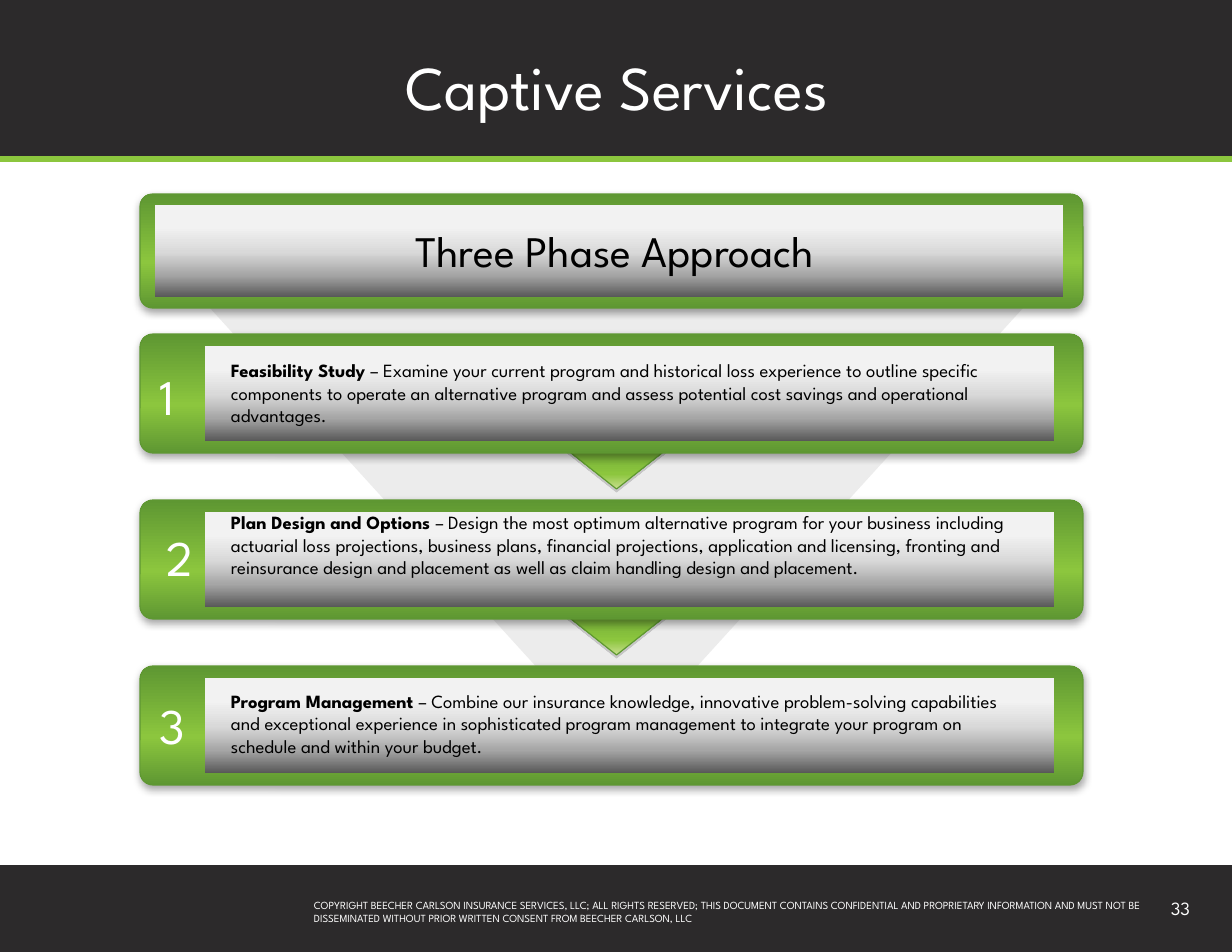
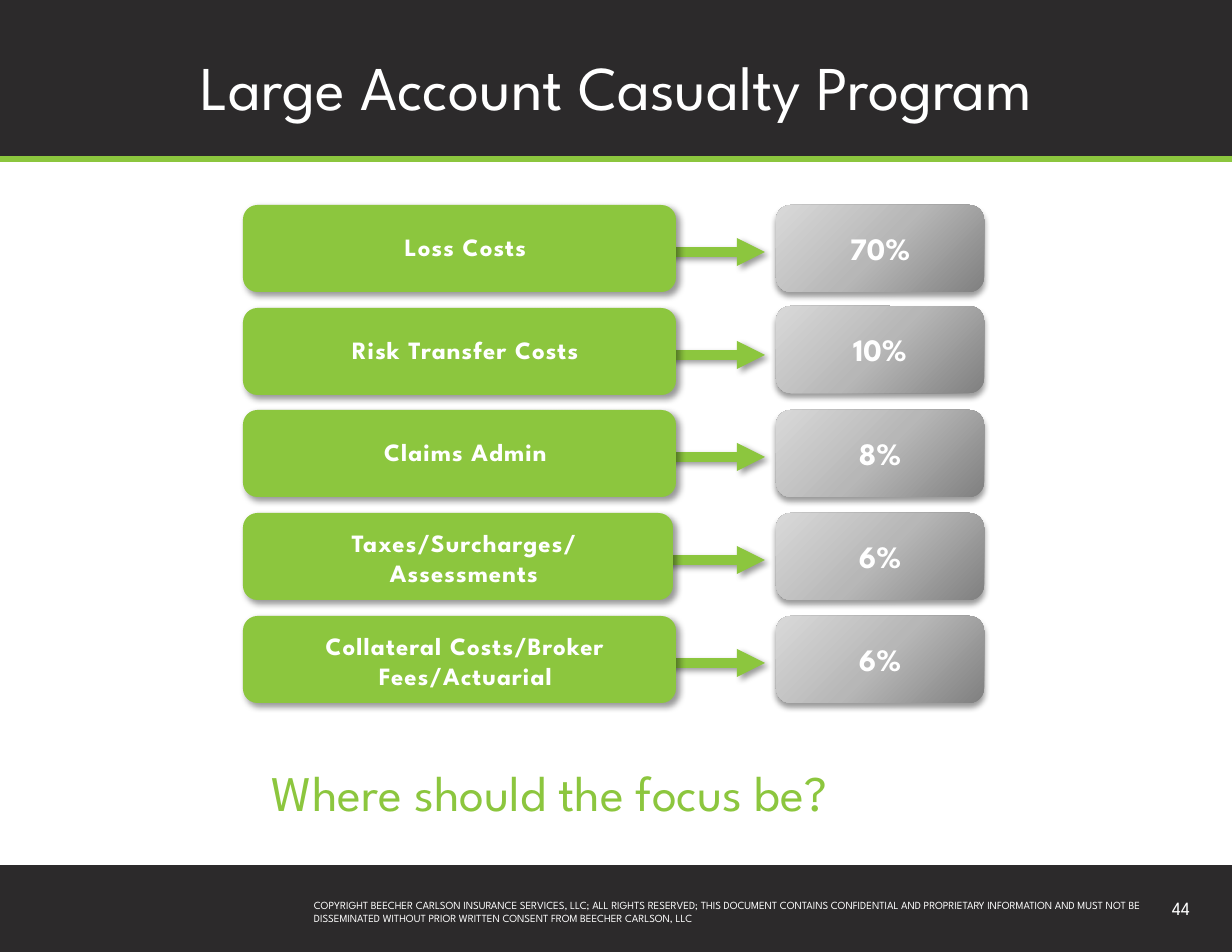
from lxml import etree
from pptx import Presentation
from pptx.dml.color import RGBColor
from pptx.enum.shapes import MSO_CONNECTOR, MSO_SHAPE
from pptx.enum.text import MSO_ANCHOR, PP_ALIGN
from pptx.oxml.ns import qn
from pptx.util import Emu, Pt

PX = 914400 / 112
WIDTH, HEIGHT = 1232, 952
FONT = "League Spartan"

RECT = MSO_SHAPE.RECTANGLE
ROUNDED = MSO_SHAPE.ROUNDED_RECTANGLE
TRIANGLE = MSO_SHAPE.ISOSCELES_TRIANGLE
MERGE = MSO_SHAPE.FLOWCHART_MERGE
STRAIGHT = MSO_CONNECTOR.STRAIGHT
TOP, MIDDLE, BOTTOM = MSO_ANCHOR.TOP, MSO_ANCHOR.MIDDLE, MSO_ANCHOR.BOTTOM
LEFT, CENTER, RIGHT = PP_ALIGN.LEFT, PP_ALIGN.CENTER, PP_ALIGN.RIGHT

WHITE = RGBColor(0xFF, 0xFF, 0xFF)
BLACK = RGBColor(0x00, 0x00, 0x00)
CHARCOAL = RGBColor(0x2C, 0x2A, 0x2B)
LIME = RGBColor(0x8C, 0xC6, 0x3E)
PALE_LIME = RGBColor(0xC8, 0xDF, 0x8E)
GREEN = RGBColor(0x5E, 0x97, 0x32)
FUNNEL_GRAY = RGBColor(0xEC, 0xEC, 0xEC)
GRAY = RGBColor(0x80, 0x80, 0x80)
GRAYS = [RGBColor(v, v, v) for v in (0xF2, 0xD9, 0xA6, 0x59)]

# Gradients: clockwise angle, then (percent, colour) stops
GREEN_FRAME = (270, [(0, GREEN), (40, LIME), (100, GREEN)])
GREEN_TIP = (90, [(0, PALE_LIME), (25, LIME), (100, GREEN)])
SILVER = (90, list(zip((24, 51, 76, 100), GRAYS)))
STEEL = (225, [(0, GRAY), (50, RGBColor(0xB7, 0xB7, 0xB7)), (100, GRAYS[1])])

# Shadows: colour, opacity percent, blur pt, distance pt, direction
FRAME_SHADOW = (BLACK, 35, 5, 1.8, 90)
TIP_SHADOW = (GRAY, 35, 0, 1.8, 90)
DOWN_SHADOW = (BLACK, 40, 4, 3, 90)
SLANT_SHADOW = (BLACK, 40, 4, 3, 45)

COPYRIGHT = ("COPYRIGHT BEECHER CARLSON INSURANCE SERVICES, LLC; ALL RIGHTS RESERVED; "
             "THIS DOCUMENT CONTAINS CONFIDENTIAL AND PROPRIETARY INFORMATION AND MUST NOT BE "
             "DISSEMINATED WITHOUT PRIOR WRITTEN CONSENT FROM BEECHER CARLSON, LLC")

# Name, description, number left and offset, text offset
PHASES = [
    ("Feasibility Study ",
     "– Examine your current program and historical loss experience to outline specific "
     "components to operate an alternative program and assess potential cost savings and "
     "operational advantages.", 149, 26, 22),
    ("Plan Design and Options ",
     "– Design the most optimum alternative program for your business including actuarial "
     "loss projections, business plans, financial projections, application and licensing, "
     "fronting and reinsurance design and placement as well as claim handling design and "
     "placement.", 156, 21, 8),
    ("Program Management ",
     "– Combine our insurance knowledge, innovative problem-solving capabilities and "
     "exceptional experience in sophisticated program management to integrate your program "
     "on schedule and within your budget.", 149, 23, 21),
]

# Label, share, label width, line spacing, share offset
COSTS = [
    ("Loss Costs", "70%", 433, 0.8, 0),
    ("Risk Transfer Costs", "10%", 433, 0.8, -2),
    ("Claims Admin", "8%", 433, 0.8, 0),
    ("Taxes/Surcharges/\nAssessments", "6%", 430, None, 0),
    ("Collateral Costs/Broker Fees/Actuarial", "6%", 433, None, 0),
]


def px(*lengths):
    return [Emu(round(length * PX)) for length in lengths]


def add_color(parent, color):
    return etree.SubElement(parent, qn("a:srgbClr"), val=str(color))


def write(shape, text, size, color=WHITE, lead="", bold=False, align=LEFT, anchor=TOP,
          insets=(11, 6), line_spacing=None, tracking=None):
    """Fill a shape with text, one paragraph a line, after an optional bold lead."""
    frame = shape.text_frame
    frame.word_wrap = True
    frame.vertical_anchor = anchor
    frame.margin_left, frame.margin_top = px(*insets)
    frame.margin_right, frame.margin_bottom = px(*insets)
    for index, line in enumerate(text.split("\n")):
        para = frame.add_paragraph() if index else frame.paragraphs[0]
        para.alignment = align
        para.line_spacing = line_spacing
        spans = [(line, bold)]
        if lead and index == 0:
            spans.insert(0, (lead, True))
        for words, heavy in spans:
            span = para.add_run()
            span.text = words
            span.font.name = FONT
            span.font.size = Pt(size)
            span.font.bold = heavy
            span.font.color.rgb = color
            if tracking:
                span.font._element.set("spc", str(round(tracking * 100)))


class Deck:
    def __init__(self):
        self.file = Presentation()
        self.file.slide_width, self.file.slide_height = px(WIDTH, HEIGHT)
        self.page = None

    def new_page(self, title, number):
        self.page = self.file.slides.add_slide(self.file.slide_layouts[6])
        for top, height in ((867, 85), (0, 159)):
            self.shape(RECT, 0, top, WIDTH, height, CHARCOAL, line=(CHARCOAL, 2))
        self.line(0, 159, WIDTH, 159, 4)
        self.text(314, 898, 857, 27, COPYRIGHT, size=7, anchor=BOTTOM, insets=(0, 0))
        self.text(62, 31, 1109, 110, title, size=40, align=CENTER, anchor=MIDDLE,
                  insets=(12, 7))
        self.text(914, 890, 288, 50, number, size=12, align=RIGHT, insets=(12, 7))

    def shape(self, kind, left, top, width, height, fill, line=None, shadow=None,
              corner=None, turn=0):
        """Add a preset shape; fill is a colour or a gradient."""
        shape = self.page.shapes.add_shape(kind, *px(left, top, width, height))
        shape.rotation = turn
        if corner is not None:
            shape.adjustments[0] = corner
        if isinstance(fill, RGBColor):
            shape.fill.solid()
            shape.fill.fore_color.rgb = fill
        else:
            self.gradient(shape, *fill)
        if line:
            shape.line.color.rgb = line[0]
            shape.line.width = Pt(line[1])
        else:
            shape.line.fill.background()
        shape.shadow.inherit = False
        if shadow:
            self.shadow(shape._element.spPr.find(qn("a:effectLst")), *shadow)
        return shape

    def gradient(self, shape, angle, stops):
        shape.fill.gradient()
        shape.fill.gradient_angle = 360 - angle
        stop_list = shape._element.spPr.find(qn("a:gradFill")).find(qn("a:gsLst"))
        for stop in list(stop_list):
            stop_list.remove(stop)
        for percent, color in stops:
            add_color(etree.SubElement(stop_list, qn("a:gs"), pos=str(percent * 1000)), color)

    def shadow(self, effects, color, opacity, blur, distance, direction):
        outer = etree.SubElement(effects, qn("a:outerShdw"), blurRad=str(Pt(blur)),
                                 dist=str(Pt(distance)), dir=str(direction * 60000),
                                 rotWithShape="0")
        etree.SubElement(add_color(outer, color), qn("a:alpha"), val=str(opacity * 1000))

    def line(self, x1, y1, x2, y2, weight, arrow=False, shadow=None):
        line = self.page.shapes.add_connector(STRAIGHT, *px(x1, y1, x2, y2))
        line.line.color.rgb = LIME
        line.line.width = Pt(weight)
        properties = line._element.spPr
        if arrow:
            etree.SubElement(properties.find(qn("a:ln")), qn("a:tailEnd"), type="triangle")
        effects = etree.SubElement(properties, qn("a:effectLst"))
        if shadow:
            self.shadow(effects, *shadow)

    def text(self, left, top, width, height, text, **style):
        box = self.page.shapes.add_textbox(*px(left, top, width, height))
        write(box, text, **style)

    def framed_panel(self, top, height, inner_left, inner_width, inner_height):
        """Green rounded frame around a silver panel."""
        self.shape(ROUNDED, 140, top, 943, height, GREEN_FRAME, line=(GREEN, 0.75),
                   shadow=FRAME_SHADOW, corner=0.11)
        self.shape(RECT, inner_left, top + (height - inner_height) // 2, inner_width,
                   inner_height, SILVER)


def captive_services(deck):
    deck.new_page("Captive Services", "33")
    deck.shape(MERGE, 159, 252, 915, 503, FUNNEL_GRAY)
    deck.framed_panel(194, 114, 155, 908, 92)
    deck.text(233, 221, 763, 59, "Three Phase Approach", size=28, color=BLACK,
              align=CENTER, insets=(6, 3))
    for index, (name, description, number_left, number_drop, text_drop) in enumerate(PHASES):
        top = 334 + 166 * index
        if index < len(PHASES) - 1:
            deck.shape(TRIANGLE, 542, top + 96, 149, 59, GREEN_TIP, line=(GREEN, 0.75),
                       shadow=TIP_SHADOW, turn=180)
        deck.framed_panel(top, 119, 205, 849, 95)
        deck.text(number_left, top + number_drop, 59, 72, str(index + 1), size=32)
        deck.text(225, top + text_drop, 811, 74, description, size=12, color=BLACK,
                  lead=name, insets=(6, 3))


def casualty_program(deck):
    deck.new_page("Large Account Casualty Program", "44")
    for index, (label, share, width, spacing, share_shift) in enumerate(COSTS):
        top = 205 + round(102.7 * index)
        share_box = deck.shape(ROUNDED, 776, top + share_shift, 208, 87, STEEL,
                               shadow=DOWN_SHADOW)
        write(share_box, share, size=20, bold=True, align=CENTER, anchor=MIDDLE,
              insets=(9, 4))
        deck.line(644, top + 47, 765, top + 47, 6, arrow=True, shadow=SLANT_SHADOW)
        deck.shape(ROUNDED, 243, top, width, 87, LIME, shadow=SLANT_SHADOW)
        deck.text(255, top + 1, width - 12, 87, label, size=16, bold=True, align=CENTER,
                  anchor=MIDDLE, line_spacing=spacing, tracking=0.7)
    deck.text(261, 756, 704, 72, "Where should the focus be?", size=32, color=LIME)


def main():
    deck = Deck()
    captive_services(deck)
    casualty_program(deck)
    deck.file.save("out.pptx")


if __name__ == "__main__":
    main()
